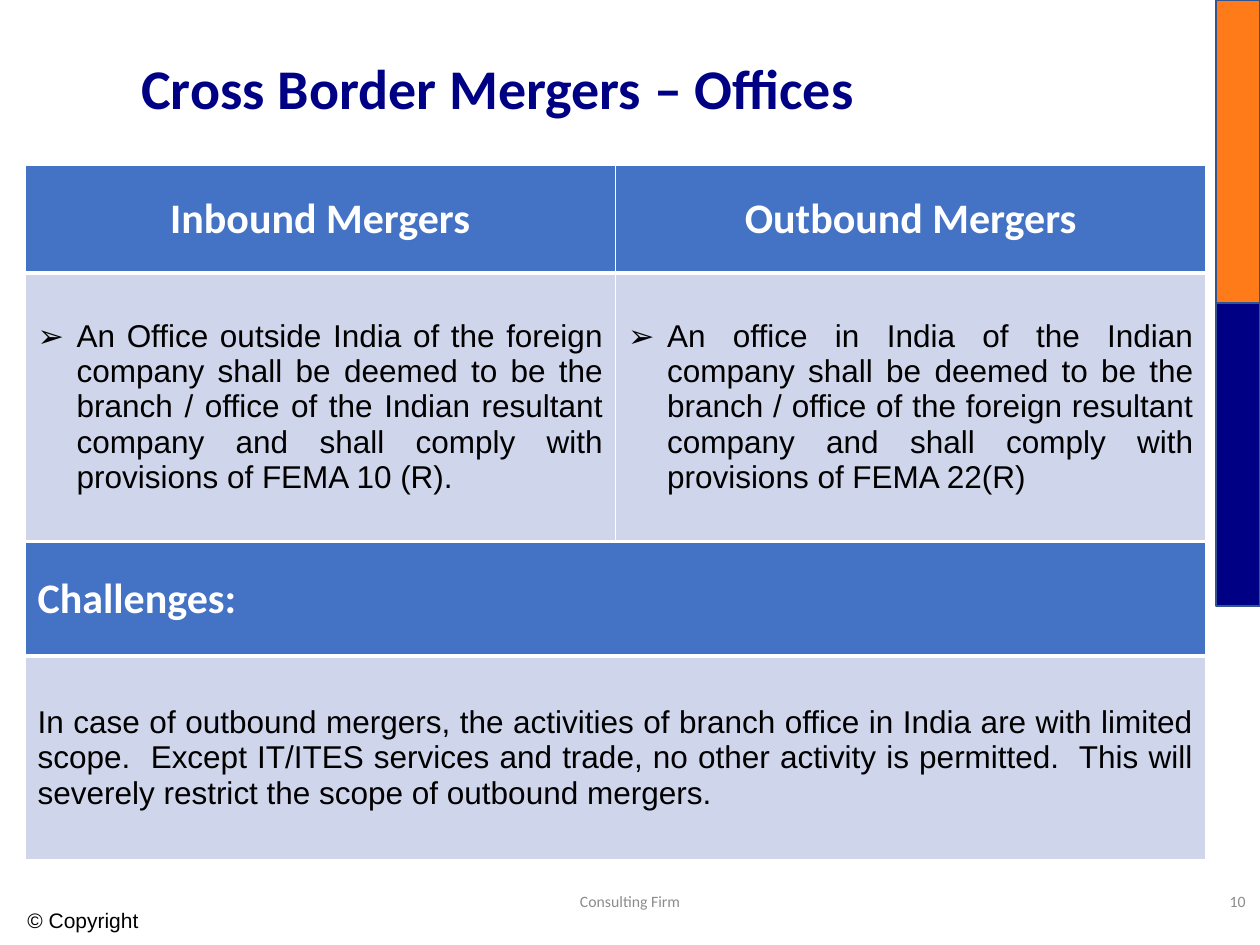
from lxml import etree
from pptx import Presentation
from pptx.dml.color import RGBColor
from pptx.enum.shapes import MSO_SHAPE
from pptx.enum.text import MSO_ANCHOR, PP_ALIGN
from pptx.oxml.ns import qn
from pptx.util import Emu, Pt

RECT = MSO_SHAPE.RECTANGLE
MIDDLE = MSO_ANCHOR.MIDDLE
LEFT, CENTER, RIGHT, JUSTIFY = PP_ALIGN.LEFT, PP_ALIGN.CENTER, PP_ALIGN.RIGHT, PP_ALIGN.JUSTIFY
PX = 914400 / 126

# Text styles are (font, size, colour, bold)
THEME = {
    "orange": "FF7B19", "navy": "000085", "outline": "325491",
    "header_fill": "4472C4", "body_fill": "CFD5EA", "border": "FFFFFF",
    "title": ("Calibri", 32, "000085", True),
    "header": ("Calibri", 24, "FFFFFF", True),
    "body": ("Arial", 18, "000000", False),
    "footer": ("Calibri", 9, "8C8C8C", False),
    "copyright": ("Arial", 12, "000000", False),
}


def box(*lengths):
    return [Emu(round(length * PX)) for length in lengths]


def write(frame, text, style, align):
    font_name, size, color, bold = THEME[style]
    frame.word_wrap = True
    frame.vertical_anchor = MIDDLE
    paragraph = frame.paragraphs[0]
    paragraph.alignment = align
    run = paragraph.add_run()
    run.text = text
    run.font.name, run.font.size, run.font.bold = font_name, Pt(size), bold
    run.font.color.rgb = RGBColor.from_string(color)
    return paragraph


prs = Presentation()
prs.slide_width, prs.slide_height = box(1260, 945)
slide = prs.slides.add_slide(prs.slide_layouts[6])

# Side bands
for band_index, band_color in enumerate((THEME["orange"], THEME["navy"])):
    band = slide.shapes.add_shape(RECT, *box(1216, 303 * band_index, 44, 303))
    band.shadow.inherit = False
    band.fill.solid()
    band.fill.fore_color.rgb = RGBColor.from_string(band_color)
    band.line.color.rgb = RGBColor.from_string(THEME["outline"])
    band.line.width = Pt(1)

# Title and footer texts
for bounds, text, style, align in [
    ((129, 0, 1086, 183), "Cross Border Mergers – Offices", "title", LEFT),
    ((974, 876, 284, 50), "10", "footer", RIGHT),
    ((417, 876, 426, 50), "Consulting Firm", "footer", CENTER),
    ((15, 895, 208, 50), "© Copyright", "copyright", LEFT),
]:
    label = slide.shapes.add_textbox(*box(*bounds))
    paragraph = write(label.text_frame, text, style, align)
    if style == "title":
        paragraph.line_spacing = 0.9

# Merger comparison and challenges: (top, row heights, headers, header align, bodies, bulleted)
sections = [
    (165, (108, 268), ("Inbound Mergers", "Outbound Mergers"), CENTER, (
        "An Office outside India of the foreign company shall be deemed to be the branch / office of "
        "the Indian resultant company and shall comply with provisions of FEMA 10 (R).",
        "An office in India of the Indian company shall be deemed to be the branch / office of "
        "the foreign resultant company and shall comply with provisions of FEMA 22(R)"), True),
    (542, (114, 204), ("Challenges:",), LEFT, (
        "In case of outbound mergers, the activities of branch office in India are with limited scope.  "
        "Except IT/ITES services and trade, no other activity is permitted.  "
        "This will severely restrict the scope of outbound mergers.",), False),
]
TABLE_LEFT, TABLE_WIDTH = 25, 1181

for top, heights, headers, header_align, bodies, bulleted in sections:
    bounds = box(TABLE_LEFT, top, TABLE_WIDTH, sum(heights))
    table = slide.shapes.add_table(2, len(headers), *bounds).table
    table.horz_banding = False
    for column in table.columns:
        column.width = box(TABLE_WIDTH / len(headers))[0]

    for row_index, (style, align, texts) in enumerate(
            [("header", header_align, headers), ("body", JUSTIFY, bodies)]):
        table.rows[row_index].height = box(heights[row_index])[0]
        for column_index, text in enumerate(texts):
            cell = table.cell(row_index, column_index)
            paragraph = write(cell.text_frame, text, style, align)
            cell.vertical_anchor = MIDDLE

            # Arrow bullets
            if bulleted and style == "body":
                properties = paragraph._p.get_or_add_pPr()
                indent = box(39)[0]
                properties.set("marL", str(indent))
                properties.set("indent", str(-indent))
                etree.SubElement(properties, qn("a:buFont")).set("typeface", "Arial")
                etree.SubElement(properties, qn("a:buChar")).set("char", "➢")

            # White borders, heavier between header and body
            cell_properties = cell._tc.get_or_add_tcPr()
            for side in "LRTB":
                heavy = (style, side) in (("header", "B"), ("body", "T"))
                border = etree.SubElement(cell_properties, qn(f"a:ln{side}"))
                border.set("w", str(Pt(3 if heavy else 1)))
                border_fill = etree.SubElement(border, qn("a:solidFill"))
                etree.SubElement(border_fill, qn("a:srgbClr")).set("val", THEME["border"])
            cell.fill.solid()
            cell.fill.fore_color.rgb = RGBColor.from_string(THEME[f"{style}_fill"])

prs.save("out.pptx")
